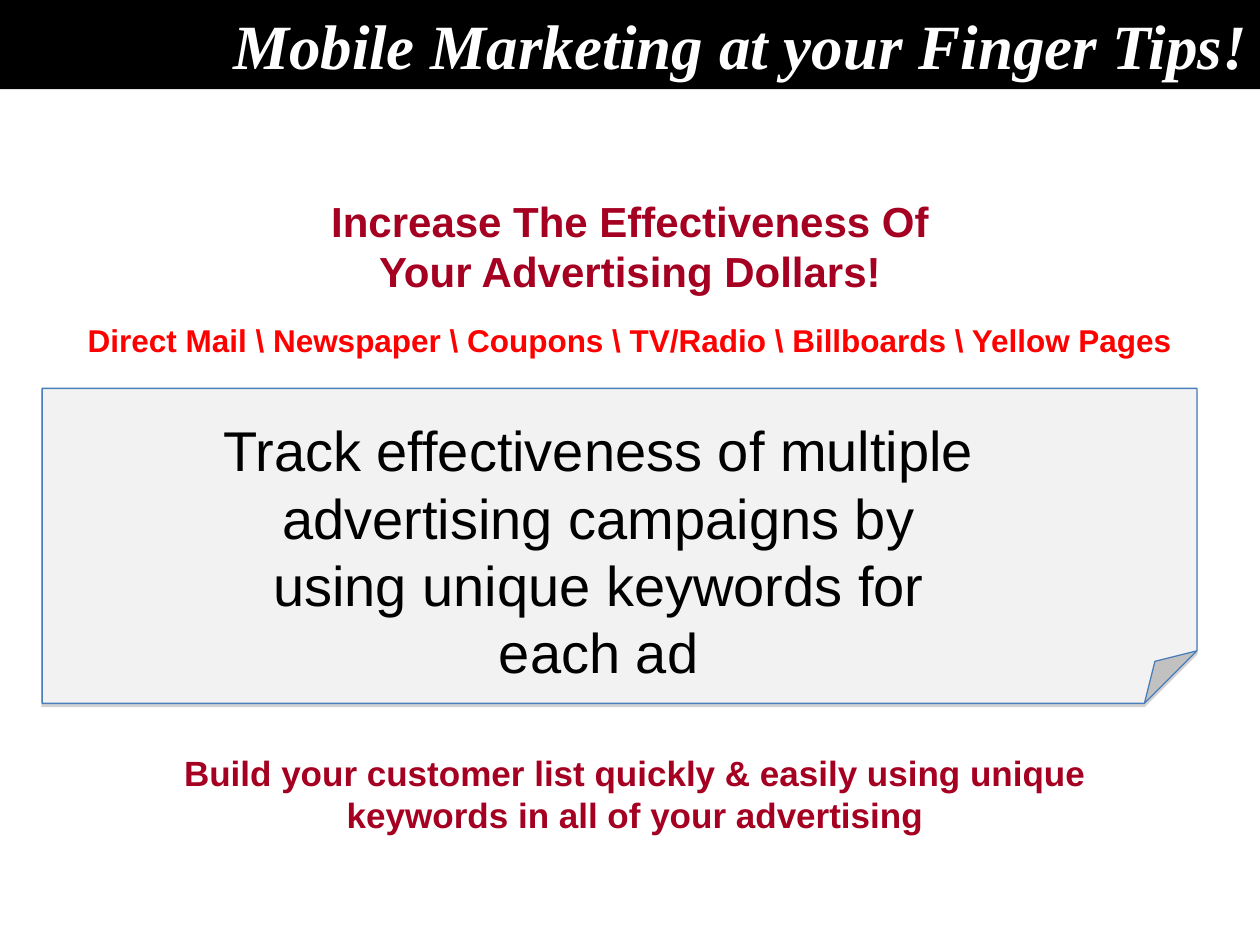
import pptx
import pptx.util
import pptx.dml.color
import pptx.enum.shapes
import pptx.enum.text
import pptx.oxml.ns
import lxml.etree

Cm, Pt = pptx.util.Cm, pptx.util.Pt
RGBColor = pptx.dml.color.RGBColor
SHAPE = pptx.enum.shapes.MSO_SHAPE
ALIGN = pptx.enum.text.PP_ALIGN
ANCHOR = pptx.enum.text.MSO_ANCHOR
qn = pptx.oxml.ns.qn

BLACK = RGBColor(0x00, 0x00, 0x00)
WHITE = RGBColor(0xFF, 0xFF, 0xFF)
CRIMSON = RGBColor(0xA5, 0x00, 0x21)
RED = RGBColor(0xFF, 0x00, 0x00)
PAPER = RGBColor(0xF2, 0xF2, 0xF2)
BLUE = RGBColor(0x4A, 0x7E, 0xBB)


def write(sp, text, size, color, font="Arial", bold=True, italic=False,
          align=ALIGN.CENTER, anchor=ANCHOR.TOP):
    """Fill a shape with text, one paragraph per line."""
    tf = sp.text_frame
    tf.word_wrap = True
    tf.vertical_anchor = anchor
    for i, line in enumerate(text.split("\n")):
        p = tf.add_paragraph() if i else tf.paragraphs[0]
        p.alignment = align
        r = p.add_run()
        r.text = line
        r.font.name = font
        r.font.size = Pt(size)
        r.font.bold = bold
        r.font.italic = italic
        r.font.color.rgb = color


def add_text(slide, left, top, width, height, text, **style):
    sp = slide.shapes.add_textbox(Cm(left), Cm(top), Cm(width), Cm(height))
    write(sp, text, **style)


def add_panel(slide, kind, left, top, width, height, fill):
    sp = slide.shapes.add_shape(kind, Cm(left), Cm(top), Cm(width), Cm(height))
    sp.shadow.inherit = False
    sp.fill.solid()
    sp.fill.fore_color.rgb = fill
    sp.line.fill.background()
    return sp


def add_drop_shadow(sp):
    effects = sp._element.spPr.find(qn("a:effectLst"))
    shadow = lxml.etree.SubElement(effects, qn("a:outerShdw"), blurRad="0",
                                   dist=str(Pt(1.8)), dir="5400000", rotWithShape="0")
    color = lxml.etree.SubElement(shadow, qn("a:srgbClr"), val="808080")
    lxml.etree.SubElement(color, qn("a:alpha"), val="35000")


def add_banner(slide, left, top, width, height):
    sp = add_panel(slide, SHAPE.RECTANGLE, left, top, width, height, BLACK)
    write(sp, "Mobile Marketing at your Finger Tips!", size=36, color=WHITE,
          font="Times New Roman", italic=True, align=ALIGN.RIGHT)


def add_headline(slide, left, top, width):
    # Two-line headline with the list of media below it
    add_text(slide, left + 0.21, top, width - 0.42, 2.31,
             "Increase The Effectiveness Of\nYour Advertising Dollars!",
             size=24, color=CRIMSON)
    add_text(slide, left, top + 2.54, width, 1.02,
             "Direct Mail \\ Newspaper \\ Coupons \\ TV/Radio \\ Billboards \\ Yellow Pages",
             size=18, color=RED)


def add_note(slide, left, top, width, height):
    # Sheet with a folded corner
    sp = add_panel(slide, SHAPE.FOLDED_CORNER, left, top, width, height, PAPER)
    sp.line.color.rgb = BLUE
    sp.line.width = Pt(0.75)
    add_drop_shadow(sp)
    # Message on the sheet
    add_text(slide, left + 3.38, top + 0.43, 15.68, 6.5,
             "Track effectiveness of multiple advertising campaigns by using "
             "unique keywords for each ad", size=32, color=BLACK, bold=False)


def add_closing(slide, left, top, width, height):
    add_text(slide, left, top, width, height,
             "Build your customer list quickly & easily using unique keywords "
             "in all of your advertising", size=20, color=CRIMSON)


def main():
    prs = pptx.Presentation()
    prs.slide_width, prs.slide_height = Cm(25.4), Cm(19.05)
    slide = prs.slides.add_slide(prs.slide_layouts[6])
    add_headline(slide, 1.48, 3.81, 22.44)
    add_banner(slide, 0, 0, 25.4, 1.8)
    add_note(slide, 0.85, 7.83, 23.28, 6.35)
    add_closing(slide, 2.96, 15.03, 19.69, 1.96)
    prs.save("out.pptx")


if __name__ == "__main__":
    main()
